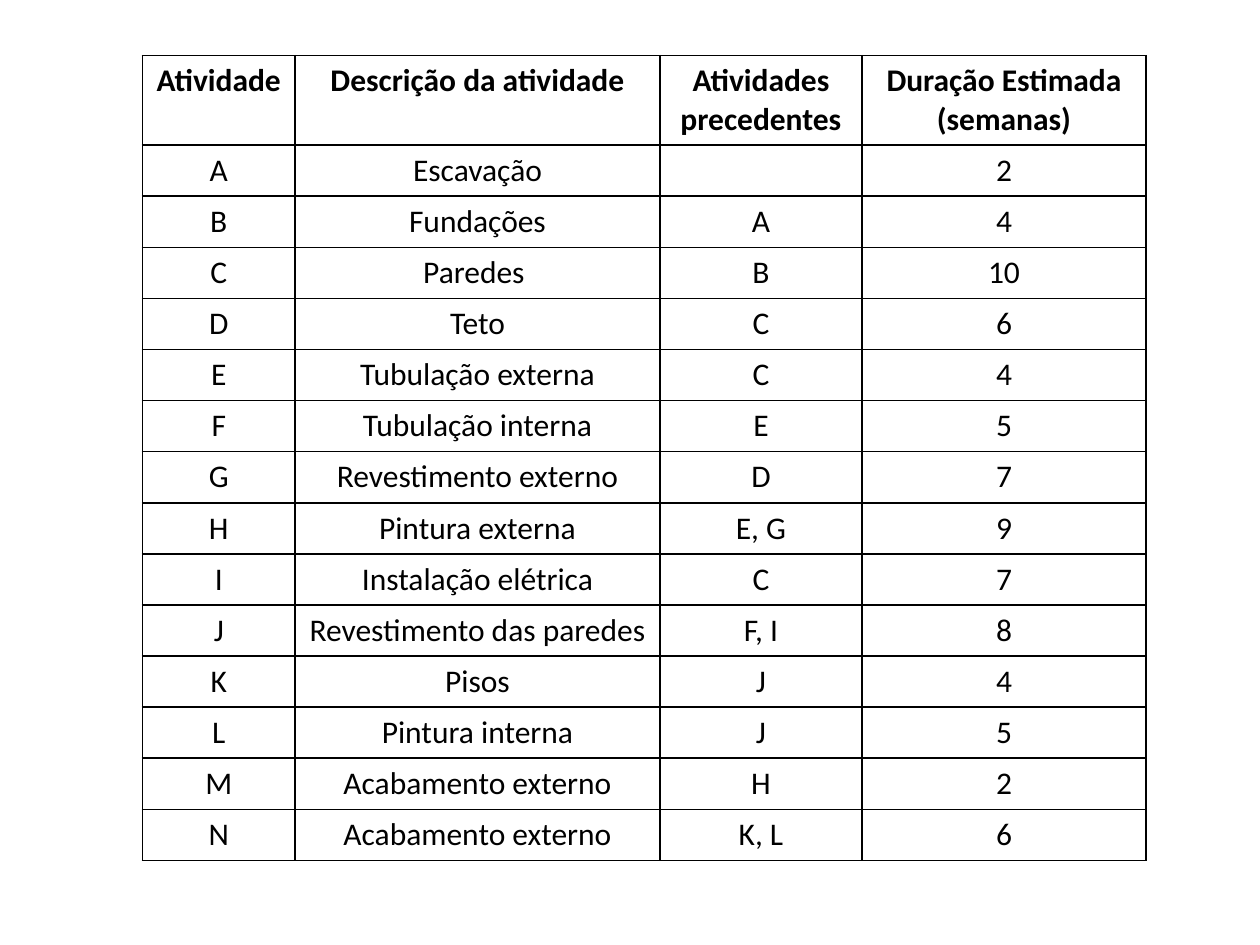
from lxml.etree import SubElement
from pptx import Presentation
from pptx.dml.color import RGBColor
from pptx.enum.text import PP_ALIGN
from pptx.oxml.ns import qn
from pptx.util import Cm, Pt

BLACK = RGBColor(0, 0, 0)
WHITE = RGBColor(255, 255, 255)

HEADER = ["Atividade", "Descrição da atividade", "Atividades precedentes",
          "Duração Estimada (semanas)"]
ACTIVITIES = [
    ["A", "Escavação", "", "2"],
    ["B", "Fundações", "A", "4"],
    ["C", "Paredes ", "B", "10"],
    ["D", "Teto", "C", "6"],
    ["E", "Tubulação externa", "C", "4"],
    ["F", "Tubulação interna", "E", "5"],
    ["G", "Revestimento externo", "D", "7"],
    ["H", "Pintura externa", "E, G", "9"],
    ["I", "Instalação elétrica", "C", "7"],
    ["J", "Revestimento das paredes", "F, I", "8"],
    ["K", "Pisos", "J", "4"],
    ["L", "Pintura interna", "J", "5"],
    ["M", "Acabamento externo", "H", "2"],
    ["N", "Acabamento externo", "K, L", "6"],
]
COLUMN_WIDTHS = [3.08, 7.35, 4.08, 5.72]
HEADER_HEIGHT = 1.8
ROW_HEIGHT = 1.03


class SlideBuilder:
    """Draws bordered tables on a slide in one shared style."""

    font = "Calibri"
    size = Pt(18)
    border = Pt(1)

    def __init__(self, s):
        self.s = s

    def table(self, left, top, widths, heights, rows):
        frame = self.s.shapes.add_table(
            len(rows), len(widths), Cm(left), Cm(top),
            Cm(sum(widths)), Cm(sum(heights)))
        table = frame.table
        table.first_row = table.horz_banding = False
        for column, width in zip(table.columns, widths):
            column.width = Cm(width)
        for i, (height, texts) in enumerate(zip(heights, rows)):
            table.rows[i].height = Cm(height)
            for j, text in enumerate(texts):
                self.cell(table.cell(i, j), text, bold=i == 0)

    def cell(self, cell, text, bold):
        cell.text = text
        p = cell.text_frame.paragraphs[0]
        p.alignment = PP_ALIGN.CENTER
        p.font.name = self.font
        p.font.size = self.size
        p.font.bold = bold
        p.font.color.rgb = BLACK
        self.borders(cell)
        cell.fill.solid()
        cell.fill.fore_color.rgb = WHITE

    def borders(self, cell):
        properties = cell._tc.get_or_add_tcPr()
        for side in ("lnL", "lnR", "lnT", "lnB"):
            line = SubElement(properties, qn(f"a:{side}"), w=str(self.border))
            fill = SubElement(line, qn("a:solidFill"))
            SubElement(fill, qn("a:srgbClr"), val=str(BLACK))


def main():
    prs = Presentation()
    prs.slide_width, prs.slide_height = Cm(25.4), Cm(19.05)
    s = prs.slides.add_slide(prs.slide_layouts[6])
    heights = [HEADER_HEIGHT] + [ROW_HEIGHT] * len(ACTIVITIES)
    SlideBuilder(s).table(2.87, 1.12, COLUMN_WIDTHS, heights,
                          [HEADER] + ACTIVITIES)
    prs.save("out.pptx")


if __name__ == "__main__":
    main()
